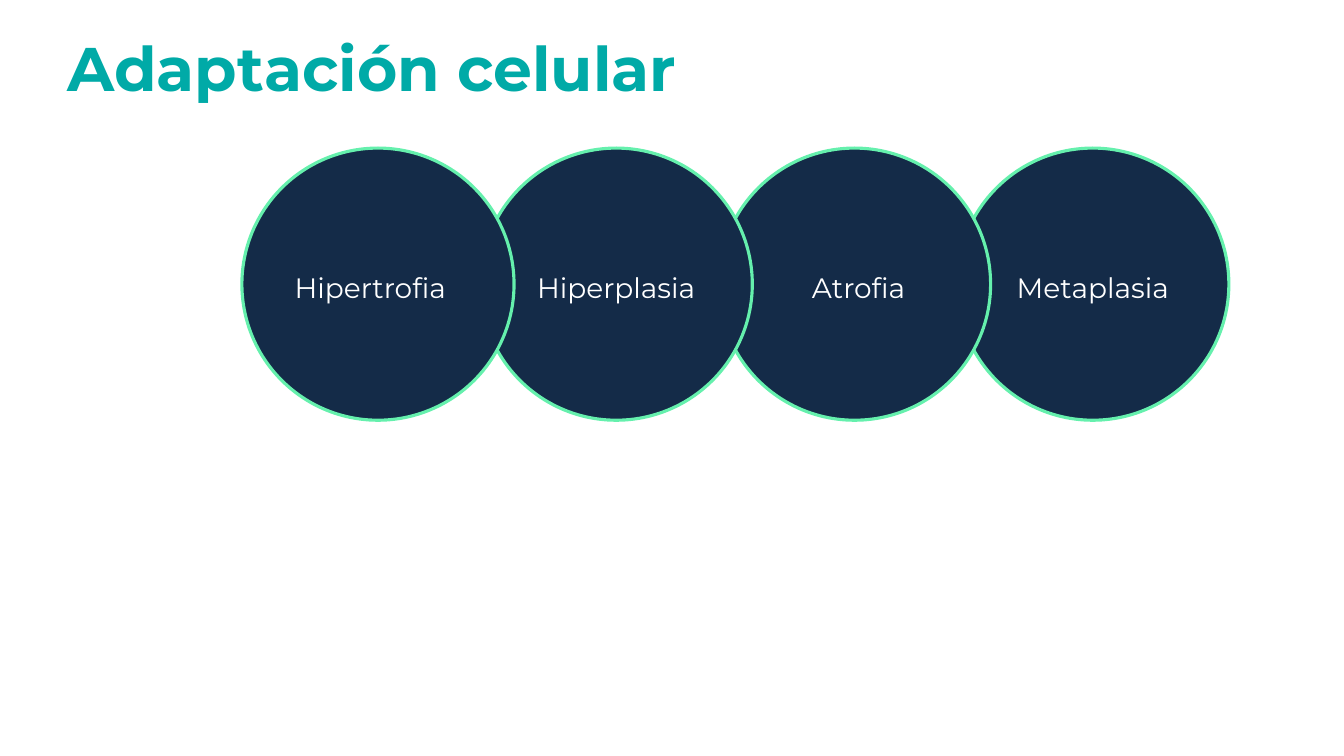
from pptx import Presentation
from pptx.dml.color import RGBColor
from pptx.enum.shapes import MSO_SHAPE as Shape
from pptx.enum.text import MSO_ANCHOR as Anchor, PP_ALIGN as Align
from pptx.util import Pt


def color(value):
    return RGBColor.from_string(value)


class CellSlide:
    """Holds the slide style and draws its title and labelled circles."""

    font = "Montserrat"
    navy, mint, teal, white = "142B48", "65F0AD", "00AAA7", "FFFFFF"
    diameter = 194.4
    label_width, label_height = 135.4, 54.8

    def __init__(self, page):
        self.page = page
        page.background.fill.solid()
        page.background.fill.fore_color.rgb = color(self.white)

    def set_text(self, box, text, size, ink, inset, bold=False):
        frame = box.text_frame
        frame.word_wrap = True
        frame.margin_left = frame.margin_right = Pt(inset)
        frame.margin_top = frame.margin_bottom = Pt(inset)
        frame.text = text
        para = frame.paragraphs[0]
        for span in para.runs:
            span.font.name = self.font
            span.font.size = Pt(size)
            span.font.bold = bold
            span.font.color.rgb = color(ink)
        return para

    def title(self, text, left, top, width, height):
        box = self.page.shapes.add_textbox(Pt(left), Pt(top), Pt(width), Pt(height))
        box.text_frame.vertical_anchor = Anchor.TOP
        self.set_text(box, text, 44, self.teal, 7.2, bold=True)

    def filled(self, group, kind, left, top, width, height):
        shape = group.shapes.add_shape(kind, Pt(left), Pt(top), Pt(width), Pt(height))
        shape.shadow.inherit = False
        shape.fill.solid()
        shape.fill.fore_color.rgb = color(self.navy)
        return shape

    def circle(self, text, left, top, label_offset):
        group = self.page.shapes.add_group_shape()
        disc = self.filled(group, Shape.OVAL, left, top, self.diameter, self.diameter)
        disc.line.color.rgb = color(self.mint)
        disc.line.width = Pt(2.25)
        label = self.filled(group, Shape.RECTANGLE, left + label_offset, top + 69.9,
                            self.label_width, self.label_height)
        label.line.fill.background()
        label.text_frame.vertical_anchor = Anchor.MIDDLE
        para = self.set_text(label, text, 20, self.white, 9.6)
        para.alignment = Align.CENTER
        para.line_spacing = 1.15


def main():
    deck = Presentation()
    deck.slide_width, deck.slide_height = Pt(960), Pt(540)
    slide = CellSlide(deck.slides.add_slide(deck.slide_layouts[6]))
    adaptations = [("Hipertrofia", 24), ("Hiperplasia", 29.5),
                   ("Atrofia", 32.4), ("Metaplasia", 29.5)]
    first_left, pitch = 172.8, 170.2
    for index, (name, label_offset) in reversed(list(enumerate(adaptations))):
        slide.circle(name, first_left + index * pitch, 105.8, label_offset)
    slide.title("Adaptación celular", 41, 14.4, 894.2, 84.2)
    deck.save("out.pptx")


if __name__ == "__main__":
    main()
